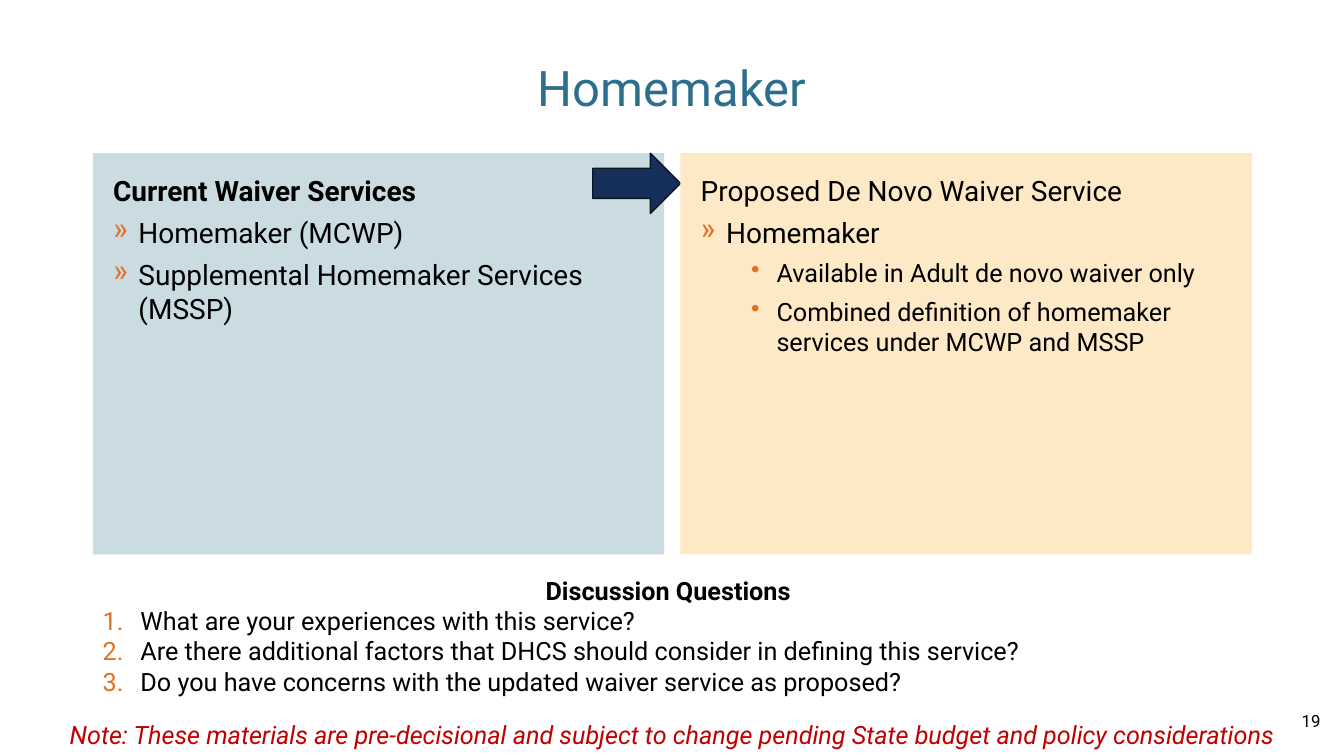
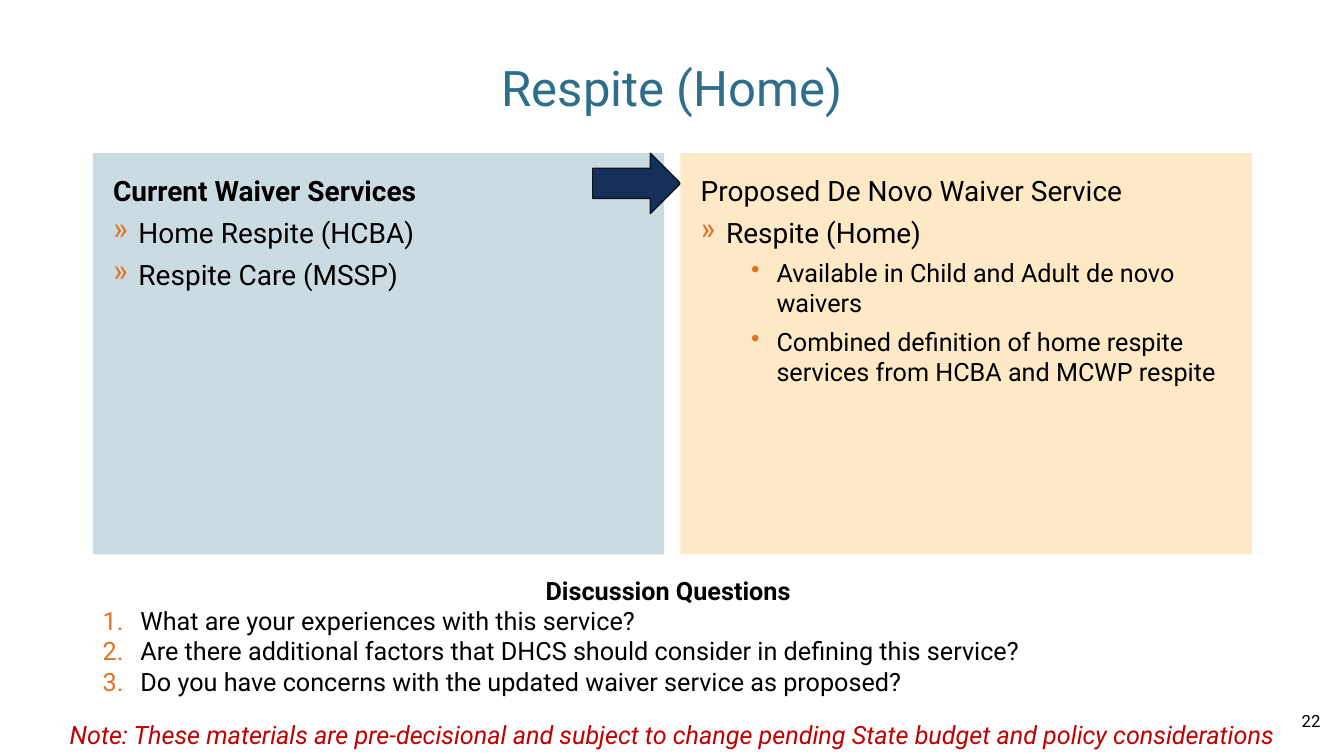
from typing import NamedTuple

from lxml import etree
from pptx import Presentation
from pptx.dml.color import RGBColor
from pptx.enum import shapes, text
from pptx.oxml import ns
from pptx.util import Cm, Pt

FONT = "Roboto"
TEAL = RGBColor(0x2D, 0x6E, 0x8D)
PALE_BLUE = RGBColor(0xCA, 0xDB, 0xE2)
PALE_ORANGE = RGBColor(0xFD, 0xE9, 0xC6)
NAVY = RGBColor(0x17, 0x30, 0x59)
DARK_NAVY = RGBColor(0x0A, 0x15, 0x27)
ORANGE = RGBColor(0xE3, 0x71, 0x24)
RED = RGBColor(0xC0, 0x00, 0x00)
BLACK = RGBColor(0, 0, 0)
WHITE = RGBColor(255, 255, 255)

LEFT, CONTENT_WIDTH = Cm(2.34), Cm(29.21)
TITLE_BOX = (LEFT, Cm(1.02), CONTENT_WIDTH, Cm(2.34))
PANELS_BOX = (LEFT, Cm(3.86), CONTENT_WIDTH, Cm(10.11))
QUESTIONS_BOX = (LEFT, Cm(14.38), Cm(29), Cm(3.28))
NOTE_BOX = (Cm(0.36), Cm(18.01), Cm(33.17), Cm(0.71))
NUMBER_BOX = (Cm(25.91), Cm(17.65), Cm(7.62), Cm(1.02))
PANEL_GAP = Cm(0.41)
PANEL_INSET = Cm(0.51)
ARROW_WIDTH, ARROW_HEIGHT = Cm(2.21), Cm(1.52)

QUESTIONS = (
    "What are your experiences with this service?",
    "Are there additional factors that DHCS should consider in defining this service?",
    "Do you have concerns with the updated waiver service as proposed?",
)
NOTE = ("Note: These materials are pre-decisional and subject to change "
        "pending State budget and policy considerations")


class Bullet(NamedTuple):
    tag: str
    attribute: str
    value: str
    margin: int
    hanging: int


SERVICE = Bullet("a:buChar", "char", "»", Cm(0.64), Cm(0.64))
DETAIL = Bullet("a:buChar", "char", "•", Cm(1.91), Cm(0.64))
NUMBERED = Bullet("a:buAutoNum", "type", "arabicPeriod", Cm(0.95), Cm(0.95))


def set_bullet(paragraph, bullet):
    properties = paragraph._p.get_or_add_pPr()
    properties.set("marL", str(bullet.margin))
    properties.set("indent", str(-bullet.hanging))
    color = etree.SubElement(properties, ns.qn("a:buClr"))
    etree.SubElement(color, ns.qn("a:srgbClr")).set("val", str(ORANGE))
    marker = etree.SubElement(properties, ns.qn(bullet.tag))
    marker.set(bullet.attribute, bullet.value)


def add_line(frame, words, size, color=BLACK, bold=False, italic=False,
             align=text.PP_ALIGN.LEFT, bullet=None, after=0):
    """Write into the frame's empty first paragraph, or into a new one."""
    paragraph = frame.paragraphs[-1]
    if paragraph.runs:
        paragraph = frame.add_paragraph()
    if bullet:
        set_bullet(paragraph, bullet)
    paragraph.alignment = align
    paragraph.space_after = Pt(after)
    run = paragraph.add_run()
    run.text = words
    font = run.font
    font.name, font.size, font.bold, font.italic = FONT, Pt(size), bold, italic
    font.color.rgb = color


def add_text(slide, box, words, size, anchor=text.MSO_ANCHOR.MIDDLE, **style):
    frame = slide.shapes.add_textbox(*box).text_frame
    frame.word_wrap = True
    frame.vertical_anchor = anchor
    add_line(frame, words, size, **style)


def add_filled(slide, kind, box, fill, line=None):
    shape = slide.shapes.add_shape(kind, *box)
    shape.shadow.inherit = False
    shape.fill.solid()
    shape.fill.fore_color.rgb = fill
    if line is None:
        shape.line.fill.background()
    else:
        shape.line.color.rgb = line
        shape.line.width = Pt(1)
    return shape


def add_panel(slide, box, fill, heading, bold, services, details=()):
    panel = add_filled(slide, shapes.MSO_SHAPE.RECTANGLE, box, fill)
    frame = panel.text_frame
    frame.word_wrap = True
    frame.vertical_anchor = text.MSO_ANCHOR.TOP
    frame.margin_left = frame.margin_right = frame.margin_top = PANEL_INSET
    add_line(frame, heading, 20, bold=bold, after=6)
    for service in services:
        add_line(frame, service, 20, bullet=SERVICE, after=6)
    for detail in details:
        add_line(frame, detail, 18, bullet=DETAIL, after=6)


def add_comparison(slide, box, current, proposed, details):
    """Place two equal panels with an arrow from the current to the proposed."""
    left, top, width, height = box
    panel_width = (width - PANEL_GAP) // 2
    right_panel = left + panel_width + PANEL_GAP
    add_panel(slide, (left, top, panel_width, height), PALE_BLUE,
              "Current Waiver Services", True, current)
    add_filled(slide, shapes.MSO_SHAPE.RIGHT_ARROW,
               (right_panel - ARROW_WIDTH, top, ARROW_WIDTH, ARROW_HEIGHT),
               NAVY, DARK_NAVY)
    add_panel(slide, (right_panel, top, panel_width, height), PALE_ORANGE,
              "Proposed De Novo Waiver Service", False, [proposed], details)


def add_questions(slide, box):
    shape = add_filled(slide, shapes.MSO_SHAPE.RECTANGLE, box, WHITE)
    frame = shape.text_frame
    frame.word_wrap = True
    frame.vertical_anchor = text.MSO_ANCHOR.MIDDLE
    add_line(frame, "Discussion Questions", 18, bold=True,
             align=text.PP_ALIGN.CENTER)
    for question in QUESTIONS:
        add_line(frame, question, 18, bullet=NUMBERED)


def add_service_slide(presentation, title, number, current, details):
    slide = presentation.slides.add_slide(presentation.slide_layouts[6])
    add_text(slide, TITLE_BOX, title, 35, color=TEAL,
             align=text.PP_ALIGN.CENTER)
    add_comparison(slide, PANELS_BOX, current, title, details)
    add_questions(slide, QUESTIONS_BOX)
    add_text(slide, NOTE_BOX, NOTE, 18, anchor=text.MSO_ANCHOR.TOP, color=RED,
             italic=True, align=text.PP_ALIGN.CENTER)
    add_text(slide, NUMBER_BOX, str(number), 12, align=text.PP_ALIGN.RIGHT)


def main():
    presentation = Presentation()
    presentation.slide_width, presentation.slide_height = Cm(33.87), Cm(19.05)
    add_service_slide(
        presentation, "Homemaker", 19,
        ["Homemaker (MCWP)", "Supplemental Homemaker Services (MSSP)"],
        ["Available in Adult de novo waiver only",
         "Combined definition of homemaker services under MCWP and MSSP"])
    add_service_slide(
        presentation, "Respite (Home)", 22,
        ["Home Respite (HCBA)", "Respite Care (MSSP)"],
        ["Available in Child and Adult de novo waivers",
         "Combined definition of home respite services from HCBA and MCWP respite"])
    presentation.save("out.pptx")


if __name__ == "__main__":
    main()
